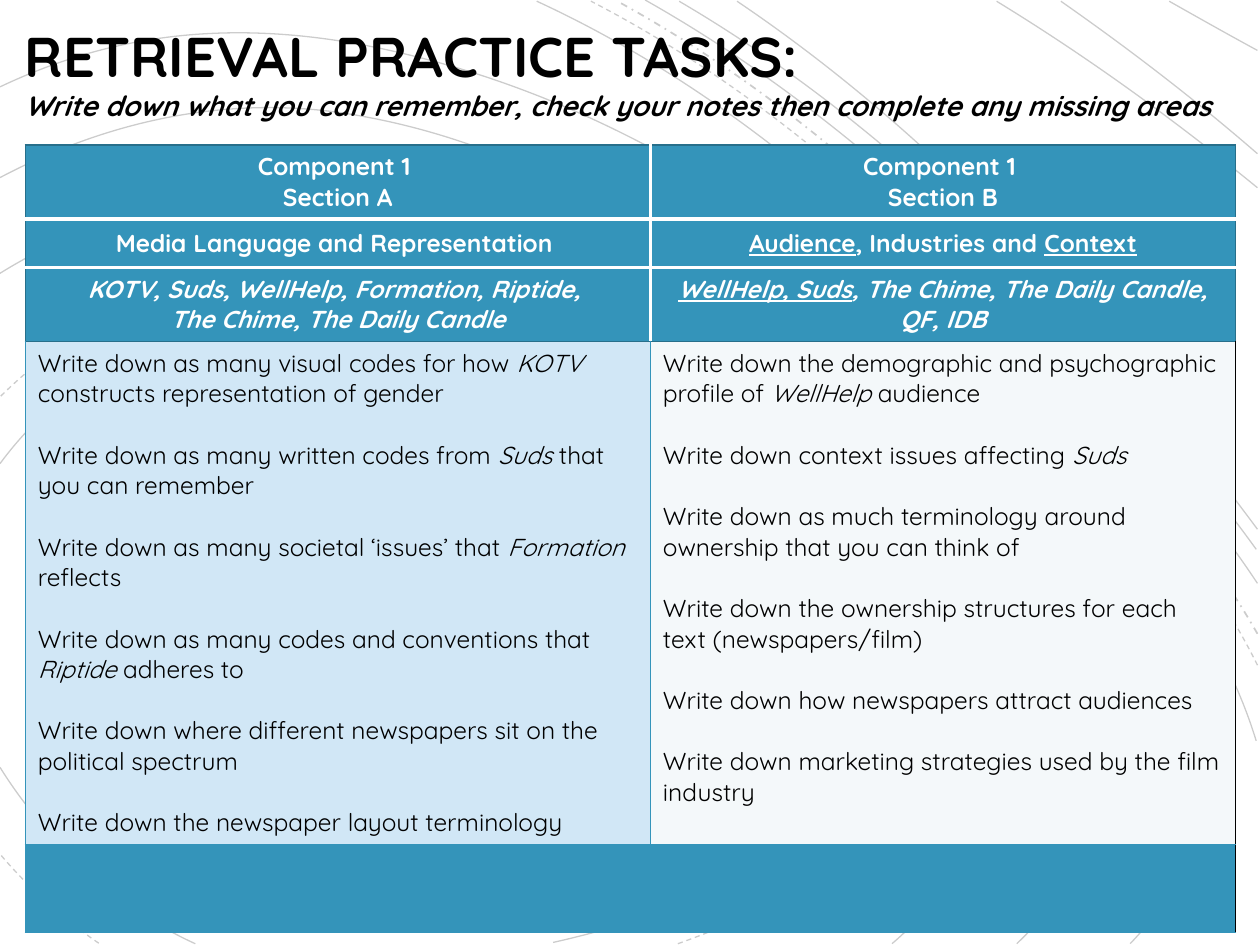
from lxml.etree import SubElement
from pptx import Presentation
from pptx.dml.color import RGBColor
from pptx.enum.dml import MSO_LINE
from pptx.enum.text import MSO_ANCHOR, PP_ALIGN
from pptx.oxml import parse_xml
from pptx.oxml.ns import nsdecls, qn
from pptx.util import Cm, Pt

FONT = "Quicksand"
BLACK = RGBColor(0x00, 0x00, 0x00)
WHITE = RGBColor(0xFF, 0xFF, 0xFF)
ACCENT = RGBColor(0x34, 0x94, 0xBA)
DARK = RGBColor(0x27, 0x6F, 0x8B)
PALE_BLUE = RGBColor(0xD1, 0xE7, 0xF6)
PALE_GREY = RGBColor(0xF4, 0xF8, 0xFA)

UNIT = 2.54
SOLID = (MSO_LINE.SOLID, 0.75)
DASHED = (MSO_LINE.DASH, 0.75)
DASH_DOT = (MSO_LINE.DASH_DOT, 1)
CURVES = [
    (SOLID, [(7.08, 7.49), (8.57, 6.24), (6.67, 4.08), (5.71, 3.15), (4.82, 2.3),
             (3.69, 1.64), (2.44, 1.53), (1.64, 1.46), (0.74, 1.71), (0, 2.17)]),
    (SOLID, [(0, 6.09), (0.38, 6.7), (0.97, 7.23), (1.55, 7.49)]),
    (SOLID, [(4.39, 7.48), (5.42, 7.25), (7.12, 6.66), (6.57, 5.28), (6.05, 3.99),
             (4.48, 2.78), (3.13, 2.48), (1.99, 2.22), (0.7, 2.73), (0, 3.68)]),
    (DASHED, [(0.01, 6.79), (0.24, 7.06), (0.51, 7.3), (0.79, 7.49)]),
    (DASHED, [(5.38, 7.49), (5.97, 7.28), (6.67, 6.95), (7, 6.37), (7.39, 5.67),
              (6.96, 4.94), (6.5, 4.4), (5.55, 3.29), (4.24, 2.27), (2.76, 2.1),
              (1.75, 1.98), (0.73, 2.43), (0, 3.15)]),
    (SOLID, [(8.07, 7.49), (9.62, 6.03), (7.82, 4.12), (6.7, 3.06), (5.64, 2.06),
             (4.36, 1.2), (2.91, 0.93), (1.89, 0.73), (0.89, 0.94), (0, 1.41)]),
    (SOLID, [(8.97, 7.49), (10.45, 5.94), (8.99, 4.21), (7.76, 3.07), (6.49, 1.89),
             (5, 0.87), (3.3, 0.45), (2.04, 0.13), (0.99, 0.22), (0, 0.69)]),
    (SOLID, [(9.97, 5.88), (9.62, 4.73), (8.64, 3.65), (7.95, 2.87), (6.91, 1.71),
             (5.69, 0.67), (4.26, 0.01)]),
    (DASHED, [(9.98, 5.28), (9.55, 4.42), (8.86, 3.63), (8.32, 3.01), (7.29, 1.82),
              (6.1, 0.74), (4.69, 0.01)]),
    (DASH_DOT, [(9.98, 5.03), (9.55, 4.28), (8.95, 3.59), (8.47, 3.02), (7.45, 1.84),
                (6.27, 0.76), (4.9, 0.01)]),
    (SOLID, [(9.98, 4.63), (9.61, 4.07), (9.16, 3.56), (8.78, 3.12), (7.73, 1.9),
             (6.52, 0.79), (5.12, 0)]),
    (SOLID, [(9.97, 4.36), (9.66, 3.93), (9.33, 3.54), (9.02, 3.18), (7.98, 1.96),
             (6.79, 0.83), (5.39, 0.01)]),
    (SOLID, [(9.98, 4.2), (9.72, 3.85), (9.46, 3.52), (9.22, 3.21), (8.25, 2),
             (7.14, 0.88), (5.85, 0.01)]),
    (SOLID, [(9.98, 1.49), (9.32, 0.95), (8.63, 0.45), (7.91, 0.01)]),
    (SOLID, [(9.98, 1.22), (9.45, 0.76), (8.92, 0.36), (8.42, 0.01)]),
    (SOLID, [(9.28, 0.01), (9.51, 0.14), (9.74, 0.27), (9.98, 0.4)]),
]

COLUMN_WIDTHS = [12.6, 11.8]
ROW_HEIGHTS = [1.49, 0.98, 1.49, 10.14, 1.78]
HEADERS = [
    ["Component 1 \vSection A", "Component 1 \vSection B"],
    ["Media Language and Representation ", "*Audience*, Industries and *Context*"],
    ["KOTV, Suds, WellHelp, Formation, Riptide, \vThe Chime, The Daily Candle",
     "*WellHelp, Suds*, The Chime, The Daily Candle, QF, IDB"],
]
TASKS = [
    ["Write down as many visual codes for how *KOTV* constructs representation of gender",
     "Write down as many written codes from *Suds* that you can remember",
     "Write down as many societal ‘issues’ that *Formation* reflects",
     "Write down as many codes and conventions that *Riptide* adheres to",
     "Write down where different newspapers sit on the political spectrum",
     "Write down the newspaper layout terminology"],
    ["Write down the demographic and psychographic profile of *WellHelp* audience",
     "Write down context issues affecting *Suds*",
     "Write down as much terminology around ownership that you can think of",
     "Write down the ownership structures for each text (newspapers/film)",
     "Write down how newspapers attract audiences",
     "Write down marketing strategies used by the film industry"],
]
THIN_DARK, THIN_ACCENT, THIN_BLACK = (DARK, 1), (ACCENT, 1), (BLACK, 1)
THICK_WHITE = (WHITE, 2.25)
ROW_EDGES = [THIN_DARK, THICK_WHITE, THICK_WHITE, THIN_DARK, THIN_ACCENT, THIN_ACCENT]
HEADER_SIDES = [THIN_DARK, THICK_WHITE, THIN_DARK]
BODY_SIDES = [THIN_ACCENT, THIN_ACCENT, THIN_BLACK]
FOOTER_SIDES = [THIN_ACCENT, THIN_BLACK, THIN_BLACK]
ROW_SIDES = [HEADER_SIDES] * 3 + [BODY_SIDES, FOOTER_SIDES]
ROW_FILLS = [[ACCENT] * 2] * 3 + [[PALE_BLUE, PALE_GREY], [ACCENT] * 2]


def add_curve(page, points, dash, width):
    """Draw one faint background chain of cubic curves."""
    start, *rest = [(Cm(x * UNIT), Cm(y * UNIT)) for x, y in points]
    builder = page.shapes.build_freeform(*start)
    builder.add_line_segments(rest, close=False)
    curve = builder.convert_to_shape()
    segments = list(curve._element.iter(qn("a:lnTo")))
    outline = segments[0].getparent()
    for first in range(0, len(segments), 3):
        bend = SubElement(outline, qn("a:cubicBezTo"))
        for segment in segments[first:first + 3]:
            bend.append(segment[0])
            outline.remove(segment)
    curve.shadow.inherit = False
    curve.fill.background()
    curve.line.color.rgb = BLACK
    curve.line.width = Pt(width)
    curve.line.dash_style = dash
    color = curve.line._ln.find(".//" + qn("a:srgbClr"))
    SubElement(color, qn("a:alpha")).set("val", "20000")


def write_paragraph(paragraph, text, color, mark, bold=False):
    """Write text whose starred parts carry the given mark."""
    for index, piece in enumerate(text.split("*")):
        for number, line in enumerate(piece.split("\v")):
            if number:
                paragraph.add_line_break()
            if line:
                span = paragraph.add_run()
                span.text = line
                if index % 2:
                    setattr(span.font, mark, True)
    font = paragraph.font
    font.name, font.size, font.bold = FONT, Pt(14), bold
    font.color.rgb = color


def style_cell(cell, fill, edges):
    """Fill a cell and draw its left, right, top and bottom borders."""
    cell.fill.solid()
    cell.fill.fore_color.rgb = fill
    properties = cell._tc.get_or_add_tcPr()
    for index, (side, (color, width)) in enumerate(zip("LRTB", edges)):
        properties.insert(index, parse_xml(
            f'<a:ln{side} {nsdecls("a")} w="{Pt(width)}"><a:solidFill>'
            f'<a:srgbClr val="{color}"/></a:solidFill></a:ln{side}>'))


def add_task_table(page):
    """Add the two-column table of retrieval tasks."""
    table = page.shapes.add_table(
        len(ROW_HEIGHTS), len(COLUMN_WIDTHS), Cm(0.51), Cm(2.92),
        Cm(sum(COLUMN_WIDTHS)), Cm(sum(ROW_HEIGHTS))).table
    table.first_row = table.horz_banding = False
    for column, width in zip(table.columns, COLUMN_WIDTHS):
        column.width = Cm(width)
    for row, height in enumerate(ROW_HEIGHTS):
        table.rows[row].height = Cm(height)
        for column, fill in enumerate(ROW_FILLS[row]):
            style_cell(table.cell(row, column), fill,
                       ROW_SIDES[row][column:column + 2] + ROW_EDGES[row:row + 2])
    for row, texts in enumerate(HEADERS):
        for column, text in enumerate(texts):
            cell = table.cell(row, column)
            cell.vertical_anchor = MSO_ANCHOR.MIDDLE if row else MSO_ANCHOR.TOP
            paragraph = cell.text_frame.paragraphs[0]
            paragraph.alignment = PP_ALIGN.CENTER
            write_paragraph(paragraph, text, WHITE, "underline", bold=True)
            paragraph.font.italic = row == 2
    for column, tasks in enumerate(TASKS):
        frame = table.cell(len(HEADERS), column).text_frame
        for number, task in enumerate(tasks):
            paragraph = frame.add_paragraph() if number else frame.paragraphs[0]
            if number:
                paragraph.space_before = Pt(17.5)
            write_paragraph(paragraph, task, BLACK, "italic")
    table.cell(4, 0).merge(table.cell(4, 1))


def add_heading(page):
    """Add the title and the instruction below it."""
    box = page.shapes.add_textbox(Cm(0.25), Cm(0.3), Cm(24.9), Cm(2.31))
    box.text_frame.word_wrap = True
    paragraph = box.text_frame.paragraphs[0]
    title = paragraph.add_run()
    title.text = "RETRIEVAL PRACTICE TASKS:"
    title.font.size = Pt(32)
    paragraph.add_line_break()
    instruction = paragraph.add_run()
    instruction.text = ("Write down what you can remember, check your notes "
                        "then complete any missing areas")
    instruction.font.size, instruction.font.italic = Pt(16), True
    paragraph.font.name, paragraph.font.bold = FONT, True
    paragraph.font.color.rgb = BLACK


def main():
    """Build and save the slide."""
    deck = Presentation()
    deck.slide_width, deck.slide_height = Cm(25.4), Cm(19.05)
    page = deck.slides.add_slide(deck.slide_layouts[6])
    for (dash, width), points in CURVES:
        add_curve(page, points, dash, width)
    add_task_table(page)
    add_heading(page)
    deck.save("out.pptx")


if __name__ == "__main__":
    main()
